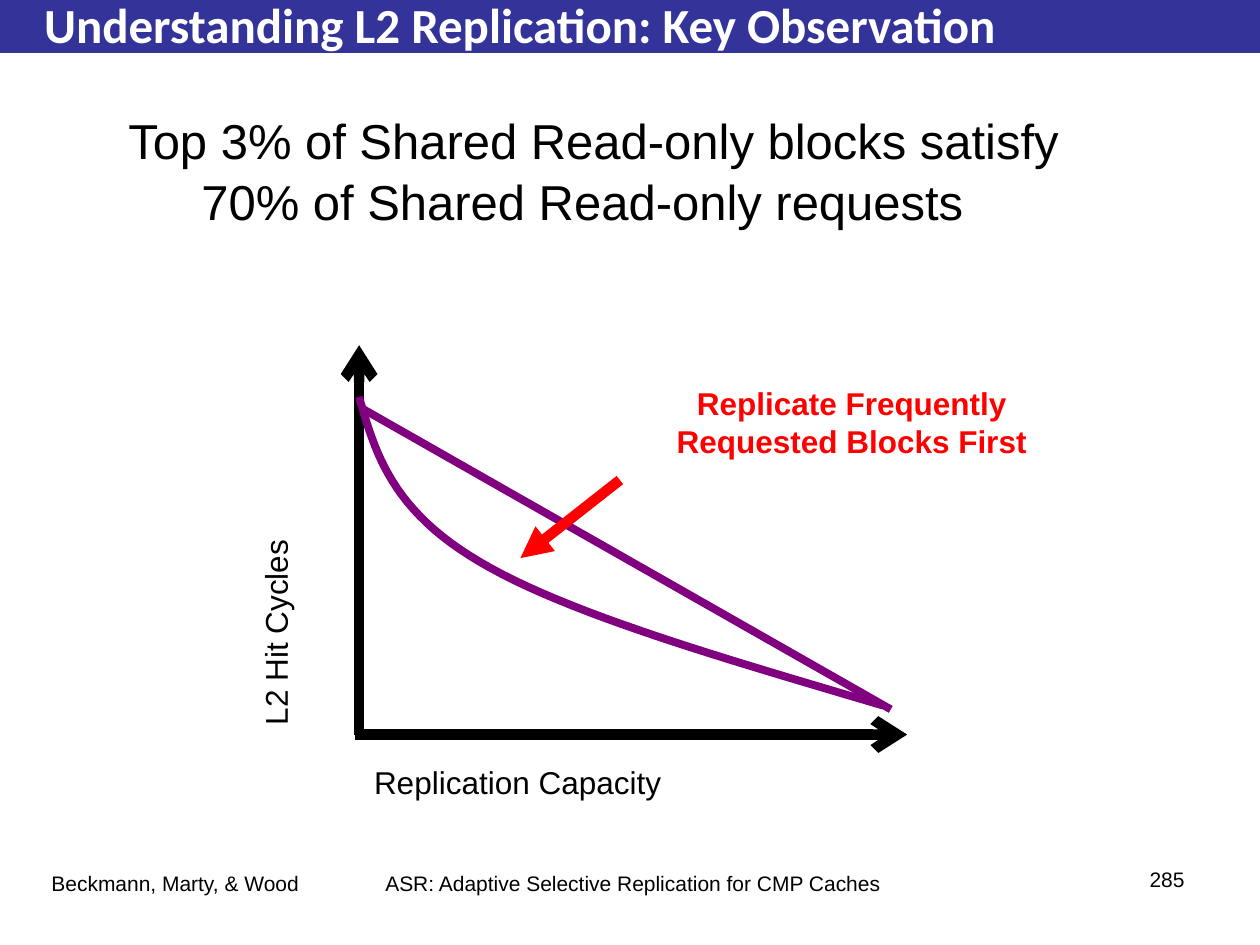
from dataclasses import dataclass

from lxml import etree
from pptx import Presentation
from pptx.dml.color import RGBColor
from pptx.enum.shapes import MSO_CONNECTOR, MSO_SHAPE
from pptx.enum.text import MSO_ANCHOR, MSO_AUTO_SIZE, PP_ALIGN
from pptx.oxml.ns import qn
from pptx.util import Inches, Pt

LEFT, CENTER, RIGHT = PP_ALIGN.LEFT, PP_ALIGN.CENTER, PP_ALIGN.RIGHT
TOP, MIDDLE = MSO_ANCHOR.TOP, MSO_ANCHOR.MIDDLE
NO_FIT = MSO_AUTO_SIZE.NONE
STRAIGHT = MSO_CONNECTOR.STRAIGHT
RECTANGLE = MSO_SHAPE.RECTANGLE


@dataclass(frozen=True)
class Theme:
    band: RGBColor = RGBColor.from_string("333399")
    ink: RGBColor = RGBColor.from_string("000000")
    paper: RGBColor = RGBColor.from_string("FFFFFF")
    curve: RGBColor = RGBColor.from_string("800080")
    accent: RGBColor = RGBColor.from_string("FF0000")
    body_font: str = "Arial"
    title_font: str = "Calibri"
    headline: int = 28
    label: int = 18
    footer: int = 12
    heavy: float = 6
    medium: float = 4.5


theme = Theme()
deck = Presentation()
deck.slide_width, deck.slide_height = Inches(10), Inches(7.5)
COL = deck.slide_width / 100
ROW = deck.slide_height / 75
slide = deck.slides.add_slide(deck.slide_layouts[5])


def write(text, area, holder=None, size=theme.label, color=theme.ink, font=theme.body_font,
          bold=False, align=LEFT, anchor=TOP, rotation=0):
    left, top, width, height = area
    holder = holder or slide.shapes.add_textbox(0, 0, 0, 0)
    holder.left, holder.width = round(left * COL), round(width * COL)
    holder.top, holder.height = round(top * ROW), round(height * ROW)
    holder.rotation = rotation
    frame = holder.text_frame
    frame.word_wrap = True
    frame.auto_size = NO_FIT
    frame.vertical_anchor = anchor
    frame.text = text
    for paragraph in frame.paragraphs:
        paragraph.alignment = align
        paragraph.font.size = Pt(size)
        paragraph.font.name = font
        paragraph.font.bold = bold
        paragraph.font.color.rgb = color


def draw_line(start, end, color, weight, arrowhead=None):
    line = slide.shapes.add_connector(
        STRAIGHT, round(start[0] * COL), round(start[1] * ROW),
        round(end[0] * COL), round(end[1] * ROW))
    line.line.color.rgb = color
    line.line.width = Pt(weight)
    if arrowhead:
        etree.SubElement(line.line._get_or_add_ln(), qn("a:tailEnd"), type=arrowhead)
    etree.SubElement(line.element.spPr, qn("a:effectLst"))


band = slide.shapes.add_shape(RECTANGLE, 0, 0, deck.slide_width, round(4.2 * ROW))
band.shadow.inherit = False
band.fill.solid()
band.fill.fore_color.rgb = theme.band
band.line.fill.background()
title = slide.shapes.title
title.element.addprevious(band.element)
write("Understanding L2 Replication: Key Observation", (2.5, 0.5, 92.5, 2.8), holder=title,
      size=theme.headline, color=theme.paper, font=theme.title_font, bold=True, anchor=MIDDLE)

for text, area, align in [
    ("Beckmann, Marty, & Wood", (3.1, 68.6, 21.9, 5.2), LEFT),
    ("ASR: Adaptive Selective Replication for CMP Caches", (24.4, 68.6, 51.7, 5.2), CENTER),
    ("285", (79.2, 68.3, 15.8, 5.2), RIGHT),
]:
    write(text, area, size=theme.footer, align=align)

write("Top 3% of Shared Read-only blocks satisfy", (9.2, 8.3, 79.5, 5.7), size=theme.headline)
write("70% of Shared Read-only requests", (15, 13.1, 68.8, 5.7), size=theme.headline)

draw_line((28.5, 58.3), (28.5, 27.4), theme.ink, theme.heavy, arrowhead="arrow")
draw_line((28.2, 58.3), (72, 58.3), theme.ink, theme.heavy, arrowhead="arrow")
write("L2 Hit Cycles", (8.9, 41.3, 28.2, 6.3), rotation=270)
write("Replication Capacity", (28.7, 60.1, 42.5, 6.3))

draw_line((28.7, 32.4), (70.7, 56.3), theme.curve, theme.medium)

STEPS = 24
bends = [
    [(28.5, 31.5), (29.8, 36), (31.1, 40.5), (38.1, 44.6)],
    [(38.1, 44.6), (45, 48.7), (57.6, 52.3), (70.1, 56)],
]
curve_points = []
for bend in bends:
    for step in range(1, STEPS + 1):
        t = step / STEPS
        weights = ((1 - t) ** 3, 3 * t * (1 - t) ** 2, 3 * t ** 2 * (1 - t), t ** 3)
        x, y = (sum(w * point[axis] for w, point in zip(weights, bend)) for axis in (0, 1))
        curve_points.append((round(x * COL), round(y * ROW)))
start_x, start_y = bends[0][0]
outline = slide.shapes.build_freeform(round(start_x * COL), round(start_y * ROW))
outline.add_line_segments(curve_points, close=False)
hit_curve = outline.convert_to_shape()
hit_curve.shadow.inherit = False
hit_curve.fill.background()
hit_curve.line.color.rgb = theme.curve
hit_curve.line.width = Pt(theme.medium)

write("Replicate Frequently\nRequested Blocks First", (41.7, 30, 51.8, 11.8),
      color=theme.accent, bold=True, align=CENTER)
draw_line((49.2, 38.1), (41.3, 44.3), theme.accent, theme.heavy, arrowhead="triangle")

deck.save("out.pptx")
